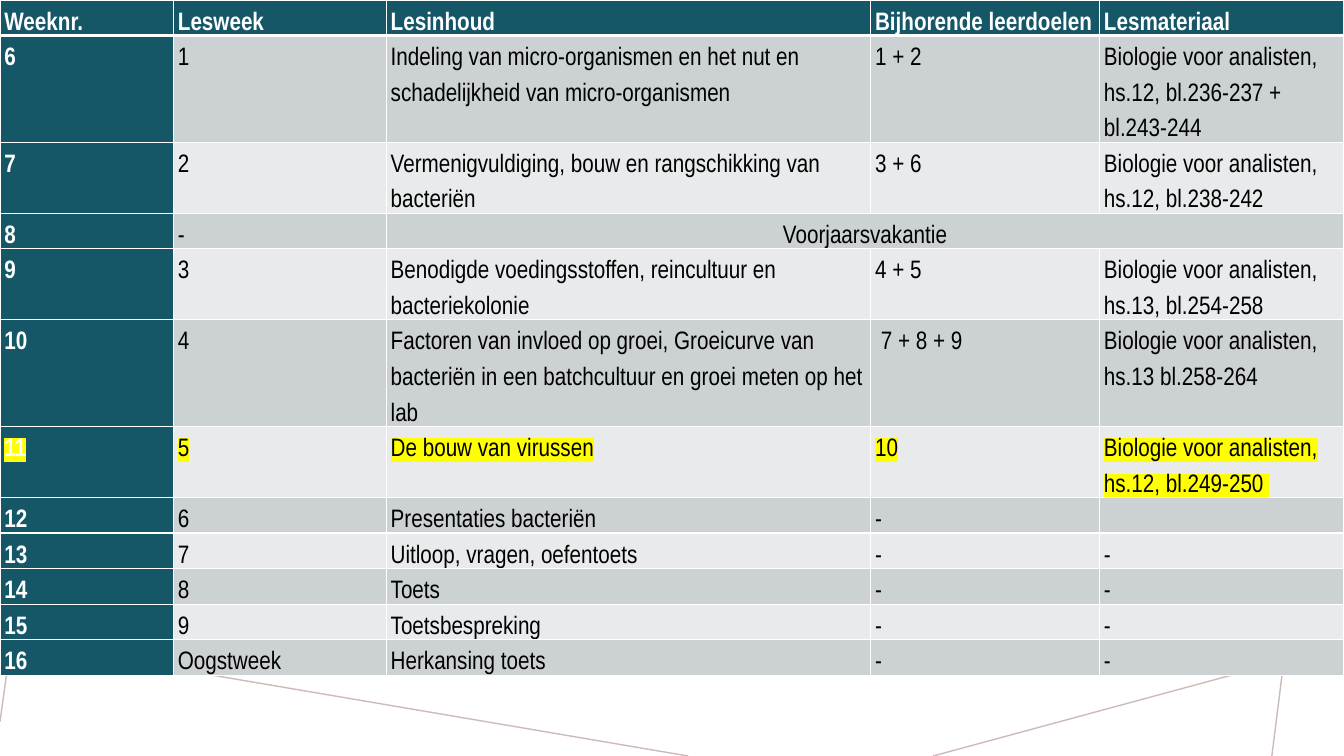
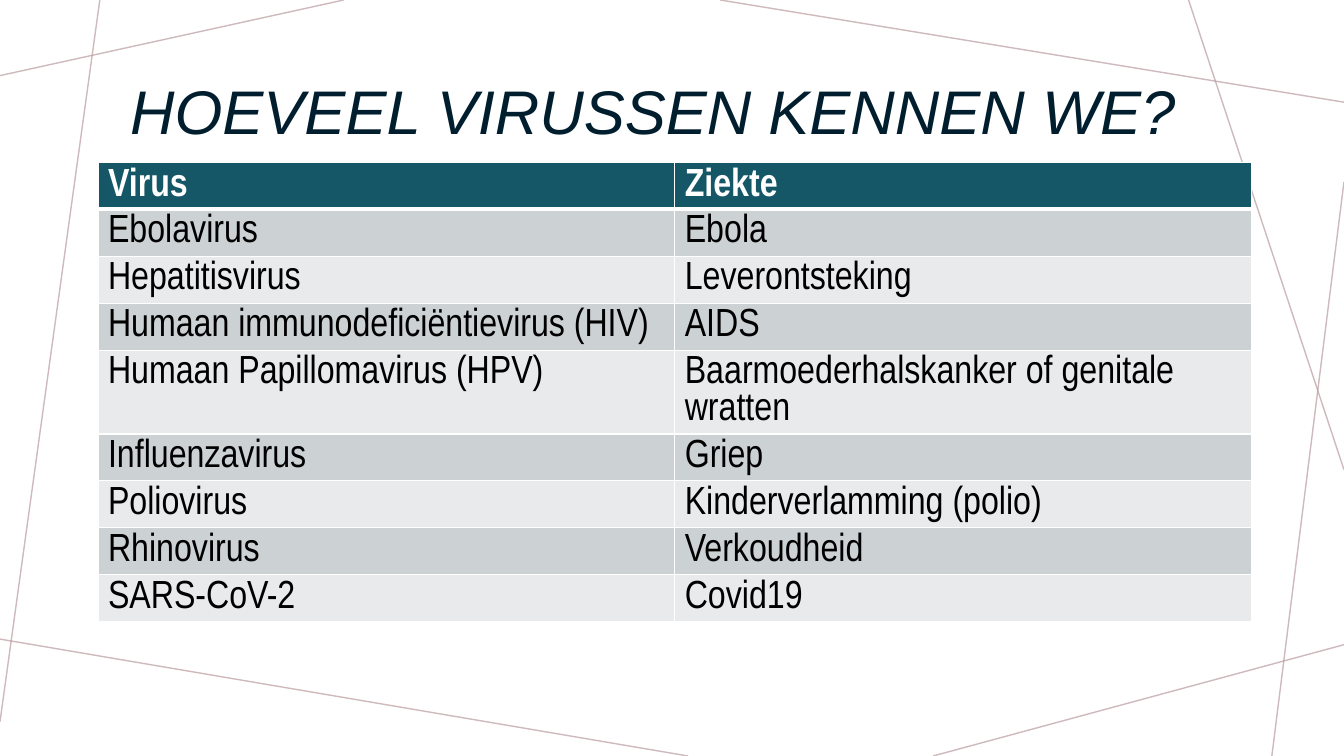
from lxml import etree
from pptx import Presentation
from pptx.dml.color import RGBColor
from pptx.enum.shapes import MSO_CONNECTOR
from pptx.enum.text import MSO_ANCHOR, PP_ALIGN
from pptx.oxml.ns import qn
from pptx.util import Pt

STRAIGHT = MSO_CONNECTOR.STRAIGHT
MIDDLE = MSO_ANCHOR.MIDDLE
LEFT, CENTER = PP_ALIGN.LEFT, PP_ALIGN.CENTER

WIDTH, HEIGHT = 960, 540
BACKGROUND_LINES = [
    (245.5, 0, 0, 54),
    (71.3, 0, 0, 515.5),
    (491.5, 540, 0, 456.5),
    (960, 460.5, 666.5, 540),
    (960, 130, 908.5, 540),
    (960, 335.5, 849, 0),
    (960, 73, 514.5, 0),
]

BOOK = "Biologie voor analisten, "
LESSONS = [
    ["Weeknr.", "Lesweek", "Lesinhoud", "Bijhorende leerdoelen", "Lesmateriaal"],
    ["6", "1", "Indeling van micro-organismen en het nut en schadelijkheid van micro-organismen",
     "1 + 2", BOOK + "hs.12, bl.236-237 + bl.243-244"],
    ["7", "2", "Vermenigvuldiging, bouw en rangschikking van bacteriën",
     "3 + 6", BOOK + "hs.12, bl.238-242"],
    ["8", "-", "Voorjaarsvakantie", "", ""],
    ["9", "3", "Benodigde voedingsstoffen, reincultuur en bacteriekolonie",
     "4 + 5", BOOK + "hs.13, bl.254-258"],
    ["10", "4", "Factoren van invloed op groei, Groeicurve van bacteriën in een "
     "batchcultuur en groei meten op het lab", " 7 + 8 + 9", BOOK + "hs.13 bl.258-264"],
    ["11", "5", "De bouw van virussen", "10", BOOK + "hs.12, bl.249-250 "],
    ["12", "6", "Presentaties bacteriën", "-", ""],
    ["13", "7", "Uitloop, vragen, oefentoets", "-", "-"],
    ["14", "8", "Toets", "-", "-"],
    ["15", "9", "Toetsbespreking", "-", "-"],
    ["16", "Oogstweek", "Herkansing toets", "-", "-"],
]
LESSON_LINES = [1, 3, 2, 1, 2, 3, 2, 1, 1, 1, 1, 1]
LESSON_PITCH = 25.35
HOLIDAY_ROW, CURRENT_ROW = 3, 6

VIRUSES = [
    ["Virus", "Ziekte"],
    ["Ebolavirus", "Ebola"],
    ["Hepatitisvirus", "Leverontsteking"],
    ["Humaan immunodeficiëntievirus (HIV)", "AIDS"],
    ["Humaan Papillomavirus (HPV)", "Baarmoederhalskanker of genitale wratten"],
    ["Influenzavirus", "Griep"],
    ["Poliovirus", "Kinderverlamming (polio)"],
    ["Rhinovirus", "Verkoudheid"],
    ["SARS-CoV-2", "Covid19"],
]
VIRUS_LINES = [1, 1, 1, 1, 2, 1, 1, 1, 1]
VIRUS_PITCH = 26.3


def rgb(value):
    return RGBColor.from_string(value)


def add_color(parent, tag, value):
    """Append a colour-holding element such as a:solidFill or a:highlight."""
    holder = etree.SubElement(parent, qn(tag))
    etree.SubElement(holder, qn("a:srgbClr"), val=value)


class Deck:
    TITLE_FONT, TABLE_FONT = "Arial", "Arial Narrow"
    TITLE, LINE, HIGHLIGHT = "001E2E", "BA9CA0", "FFFF00"
    HEAD, BANDS = "155767", ("E8EAEB", "CCD1D3")
    WHITE, BLACK = "FFFFFF", "000000"

    def __init__(self):
        self.prs = Presentation()
        self.prs.slide_width, self.prs.slide_height = Pt(WIDTH), Pt(HEIGHT)
        self.s = None

    def new_slide(self):
        self.s = self.prs.slides.add_slide(self.prs.slide_layouts[6])
        for ends in BACKGROUND_LINES:
            self.line(*ends)

    def line(self, x1, y1, x2, y2):
        cx = self.s.shapes.add_connector(STRAIGHT, Pt(x1), Pt(y1), Pt(x2), Pt(y2))
        cx.line.width = Pt(1)
        cx.line.color.rgb = rgb(self.LINE)
        sp_pr = cx.element.spPr
        etree.SubElement(sp_pr.find(".//" + qn("a:srgbClr")), qn("a:alpha"), val="70000")
        etree.SubElement(sp_pr, qn("a:effectLst"))

    def run(self, p, text, font, size, color, bold=False, italic=False, highlight=None):
        r = p.add_run()
        r.text = text
        r.font.size, r.font.bold, r.font.italic = Pt(size), bold, italic
        r.font.color.rgb = rgb(color)
        if highlight:
            add_color(r._r.get_or_add_rPr(), "a:highlight", highlight)
        r.font.name = font

    def title(self, text, x, y, w, h):
        tf = self.s.shapes.add_textbox(Pt(x), Pt(y), Pt(w), Pt(h)).text_frame
        tf.word_wrap = True
        tf.vertical_anchor = MIDDLE
        p = tf.paragraphs[0]
        p.line_spacing = 0.9
        self.run(p, text, self.TITLE_FONT, 44, self.TITLE, italic=True)

    def borders(self, cell, row):
        """Draw white cell edges, with a heavier one below the header row."""
        tc_pr = cell._tc.get_or_add_tcPr()
        widths = {"L": 1, "R": 1, "T": 3 if row == 1 else 1, "B": 3 if row == 0 else 1}
        for side, width in widths.items():
            ln = etree.SubElement(tc_pr, qn("a:ln" + side), w=str(Pt(width)))
            add_color(ln, "a:solidFill", self.WHITE)

    def table(self, rows, x, y, col_widths, row_heights, size, spacing,
              insets=(7.2, 3.6), head_column=False, marked_row=None):
        table = self.s.shapes.add_table(
            len(rows), len(col_widths), Pt(x), Pt(y),
            Pt(sum(col_widths)), Pt(sum(row_heights))).table
        table.horz_banding = False
        for column, width in zip(table.columns, col_widths):
            column.width = Pt(width)
        for i, (texts, height) in enumerate(zip(rows, row_heights)):
            table.rows[i].height = Pt(height)
            for j, text in enumerate(texts):
                cell = table.cell(i, j)
                head = i == 0 or (head_column and j == 0)
                self.borders(cell, i)
                cell.fill.solid()
                cell.fill.fore_color.rgb = rgb(self.HEAD if head else self.BANDS[i % 2])
                cell.margin_left = cell.margin_right = Pt(insets[0])
                cell.margin_top = cell.margin_bottom = Pt(insets[1])
                p = cell.text_frame.paragraphs[0]
                p.alignment, p.line_spacing = LEFT, spacing
                if text:
                    self.run(p, text, self.TABLE_FONT, size,
                             self.WHITE if head else self.BLACK, bold=head,
                             highlight=self.HIGHLIGHT if i == marked_row else None)
        return table


def main():
    deck = Deck()

    deck.new_slide()
    lessons = deck.table(
        LESSONS, 0, 0, [124, 152, 346, 163.5, 174.5],
        [LESSON_PITCH * n for n in LESSON_LINES], size=18, spacing=1.5,
        insets=(3.1, 0), head_column=True, marked_row=CURRENT_ROW)
    holiday = lessons.cell(HOLIDAY_ROW, 2)
    holiday.merge(lessons.cell(HOLIDAY_ROW, 4))
    holiday.text_frame.paragraphs[0].alignment = CENTER

    deck.new_slide()
    deck.title("HOEVEEL VIRUSSEN KENNEN WE?", 85.8, 36.5, 788.5, 90)
    deck.table(VIRUSES, 70, 116, [412, 412], [7.2 + VIRUS_PITCH * n for n in VIRUS_LINES],
               size=28, spacing=Pt(VIRUS_PITCH))

    deck.prs.save("out.pptx")


if __name__ == "__main__":
    main()
